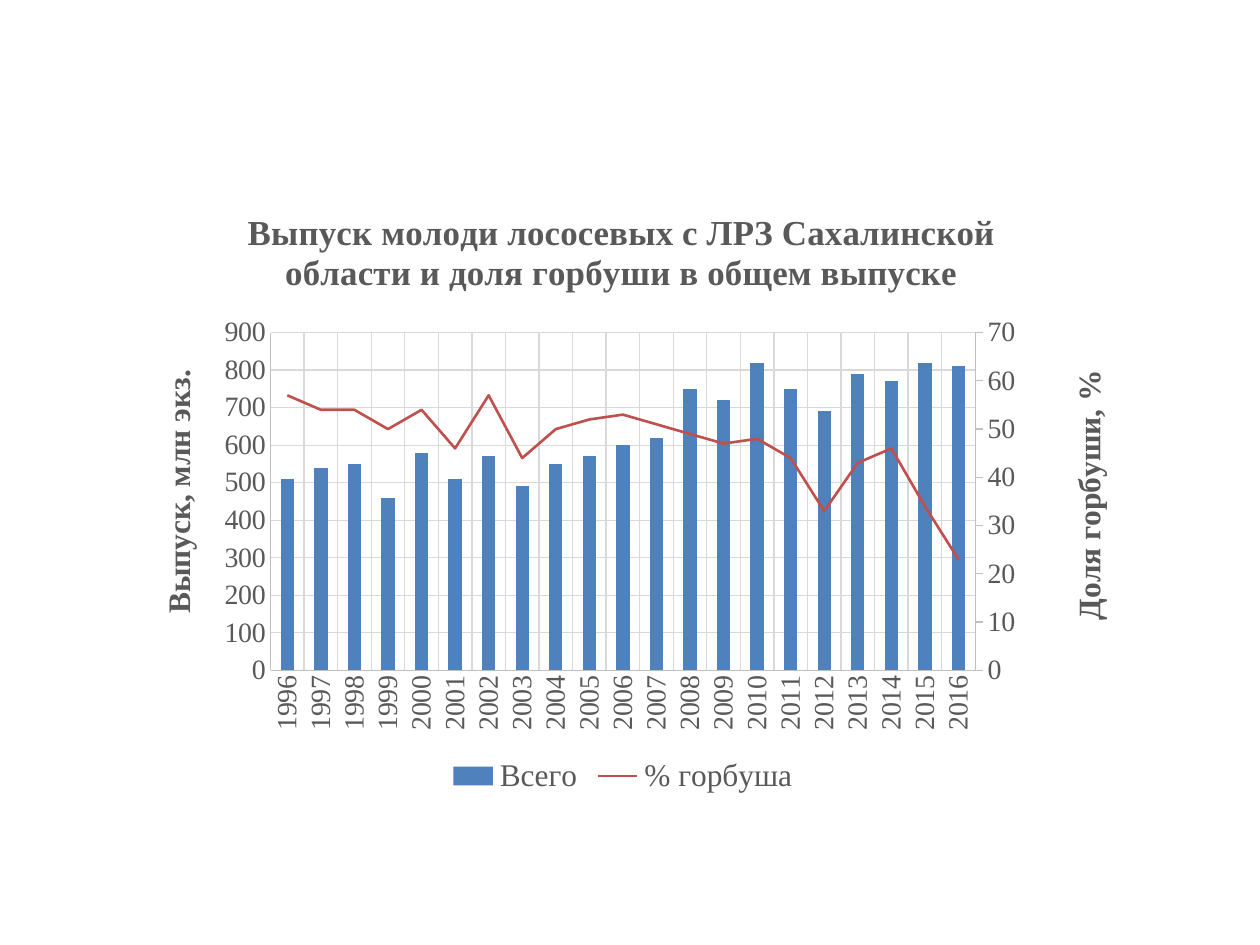
import copy

import pptx
import pptx.chart.axis
import pptx.chart.data
import pptx.dml.color
import pptx.enum.chart
import pptx.oxml
import pptx.oxml.ns
import pptx.util

TEXT_GRAY = pptx.dml.color.RGBColor(0x59, 0x59, 0x59)
AXIS_GRAY = pptx.dml.color.RGBColor(0xBF, 0xBF, 0xBF)
GRID_GRAY = pptx.dml.color.RGBColor(0xD9, 0xD9, 0xD9)
BLUE = pptx.dml.color.RGBColor(0x4F, 0x81, 0xBD)
RED = pptx.dml.color.RGBColor(0xC0, 0x50, 0x4D)
FONT = "Times New Roman"
TICK = pptx.enum.chart.XL_TICK_MARK

YEARS = [str(year) for year in range(1996, 2017)]
RELEASE = [510, 540, 550, 460, 580, 510, 570, 490, 550, 570, 600,
           620, 750, 720, 820, 750, 690, 790, 770, 820, 810]
PINK_SHARE = [57, 54, 54, 50, 54, 46, 57, 44, 50, 52, 53,
              51, 49, 47, 48, 44, 33, 43, 46, 34, 23]


class ChartSlide:
    """Holds the presentation, its current slide and the chart style."""

    def __init__(self, width, height):
        self.deck = pptx.Presentation()
        self.deck.slide_width = pptx.util.Inches(width)
        self.deck.slide_height = pptx.util.Inches(height)
        self.slide = self.deck.slides.add_slide(self.deck.slide_layouts[6])

    def apply(self, target, **values):
        for name, value in values.items():
            setattr(target, name, value)

    def font(self, font, size, bold=False):
        self.apply(font, name=FONT, size=pptx.util.Pt(size), bold=bold)
        font.color.rgb = TEXT_GRAY

    def line(self, line_format, color, width=0.75):
        line_format.color.rgb = color
        line_format.width = pptx.util.Pt(width)

    def title(self, frame, text, size):
        frame.text = text
        self.font(frame.paragraphs[0].runs[0].font, size, bold=True)

    def column_chart(self, left, top, width, height, series):
        """Add a column chart; the place is given in shares of the slide."""
        data = pptx.chart.data.CategoryChartData(number_format="0")
        data.categories = YEARS
        for name, values in series:
            data.add_series(name, values)
        wide, high = self.deck.slide_width, self.deck.slide_height
        frame = self.slide.shapes.add_chart(
            pptx.enum.chart.XL_CHART_TYPE.COLUMN_CLUSTERED,
            int(left * wide), int(top * high),
            int(width * wide), int(height * high), data)
        self.font(frame.chart.font, 10)
        return frame.chart

    def axis(self, axis, tick=TICK.NONE, grid=True):
        self.apply(axis, major_tick_mark=tick, minor_tick_mark=TICK.NONE,
                   has_major_gridlines=grid)
        self.line(axis.format.line, AXIS_GRAY)
        if grid:
            self.line(axis.major_gridlines.format.line, GRID_GRAY)
        self.font(axis.tick_labels.font, 16)

    def value_axis(self, axis, text, top, step, **style):
        self.axis(axis, **style)
        self.apply(axis, minimum_scale=0, maximum_scale=top, major_unit=step)
        self.apply(axis.tick_labels, number_format="0",
                   number_format_is_linked=False)
        self.title(axis.axis_title.text_frame, text, 18)

    def line_on_right_axis(self, chart):
        """Move the last series to a line plot; return both value axes."""
        plot_area = chart.element.xpath("c:chart/c:plotArea")[0]
        columns = plot_area.xpath("c:barChart")[0]
        share = columns.xpath("c:ser")[-1]
        for node in share.xpath("c:invertIfNegative"):
            share.remove(node)
        line_plot = pptx.oxml.parse_xml(
            f'<c:lineChart {pptx.oxml.ns.nsdecls("c")}>'
            '<c:grouping val="standard"/><c:varyColors val="0"/>'
            '<c:marker val="1"/><c:axId val="5001"/><c:axId val="5002"/>'
            '</c:lineChart>')
        line_plot.insert(2, share)
        columns.addnext(line_plot)
        left_values = plot_area.xpath("c:valAx")[0]
        values = copy.deepcopy(left_values)
        years = copy.deepcopy(plot_area.xpath("c:catAx")[0])
        left_values.addnext(values)
        values.addnext(years)
        for axis, own, other in ((years, "5001", "5002"), (values, "5002", "5001")):
            axis.xpath("c:axId")[0].set("val", own)
            axis.xpath("c:crossAx")[0].set("val", other)
        values.xpath("c:axPos")[0].set("val", "r")
        values.xpath("c:crosses")[0].set("val", "max")
        years.xpath("c:delete")[0].set("val", "1")
        return [pptx.chart.axis.ValueAxis(side) for side in (left_values, values)]

    def place(self, parent, index, **shares):
        """Give a chart part a fixed place in shares of the chart."""
        for old in parent.xpath("c:layout"):
            parent.remove(old)
        target = '<c:layoutTarget val="inner"/>' if "w" in shares else ""
        modes = "".join(f'<c:{key}Mode val="edge"/>' for key in "xy")
        places = "".join(f'<c:{key} val="{val}"/>' for key, val in shares.items())
        parent.insert(index, pptx.oxml.parse_xml(
            f'<c:layout {pptx.oxml.ns.nsdecls("c")}><c:manualLayout>'
            f'{target}{modes}{places}</c:manualLayout></c:layout>'))

    def turn_upright(self, chart):
        """Turn the year labels and the axis titles by 90 degrees."""
        for body in chart.element.xpath(
                "//c:catAx/c:txPr/a:bodyPr | //c:valAx/c:title//a:bodyPr"):
            body.set("rot", "-5400000")
            body.set("vert", "horz")


def main():
    page = ChartSlide(10, 7.5)
    chart = page.column_chart(0.106, 0.196, 0.78, 0.65,
                              [("Всего", RELEASE), ("% горбуша", PINK_SHARE)])

    # Axes
    release_axis, share_axis = page.line_on_right_axis(chart)
    page.axis(chart.category_axis)
    page.value_axis(release_axis, "Выпуск, млн экз.", 900, 100)
    page.value_axis(share_axis, "Доля горбуши, %", 70, 10,
                    tick=TICK.OUTSIDE, grid=False)
    page.turn_upright(chart)

    # Columns and line
    columns, share_line = chart.plots
    page.apply(columns, gap_width=150, vary_by_categories=False)
    release = columns.series[0]
    release.format.fill.solid()
    release.format.fill.fore_color.rgb = BLUE
    share = share_line.series[0]
    share.smooth = False
    share.marker.style = pptx.enum.chart.XL_MARKER_STYLE.NONE
    page.line(share.format.line, RED, 1.5)

    # Title and legend
    page.title(chart.chart_title.text_frame,
               "Выпуск молоди лососевых с ЛРЗ Сахалинской области "
               "и доля горбуши в общем выпуске", 20)
    chart.has_legend = True
    page.apply(chart.legend, include_in_layout=False,
               position=pptx.enum.chart.XL_LEGEND_POSITION.BOTTOM)
    page.font(chart.legend.font, 18)

    # Places inside the chart
    page.place(chart.element.xpath("c:chart/c:title")[0], 1, x=0.11, y=0.03)
    page.place(chart.element.xpath("c:chart/c:plotArea")[0], 0,
               x=0.14, y=0.24, w=0.72, h=0.55)
    axis_titles = chart.element.xpath("//c:valAx/c:title")
    for axis_title, left in zip(axis_titles, (0.02, 0.95)):
        page.place(axis_title, 1, x=left, y=0.29)

    page.deck.save("out.pptx")


if __name__ == "__main__":
    main()
